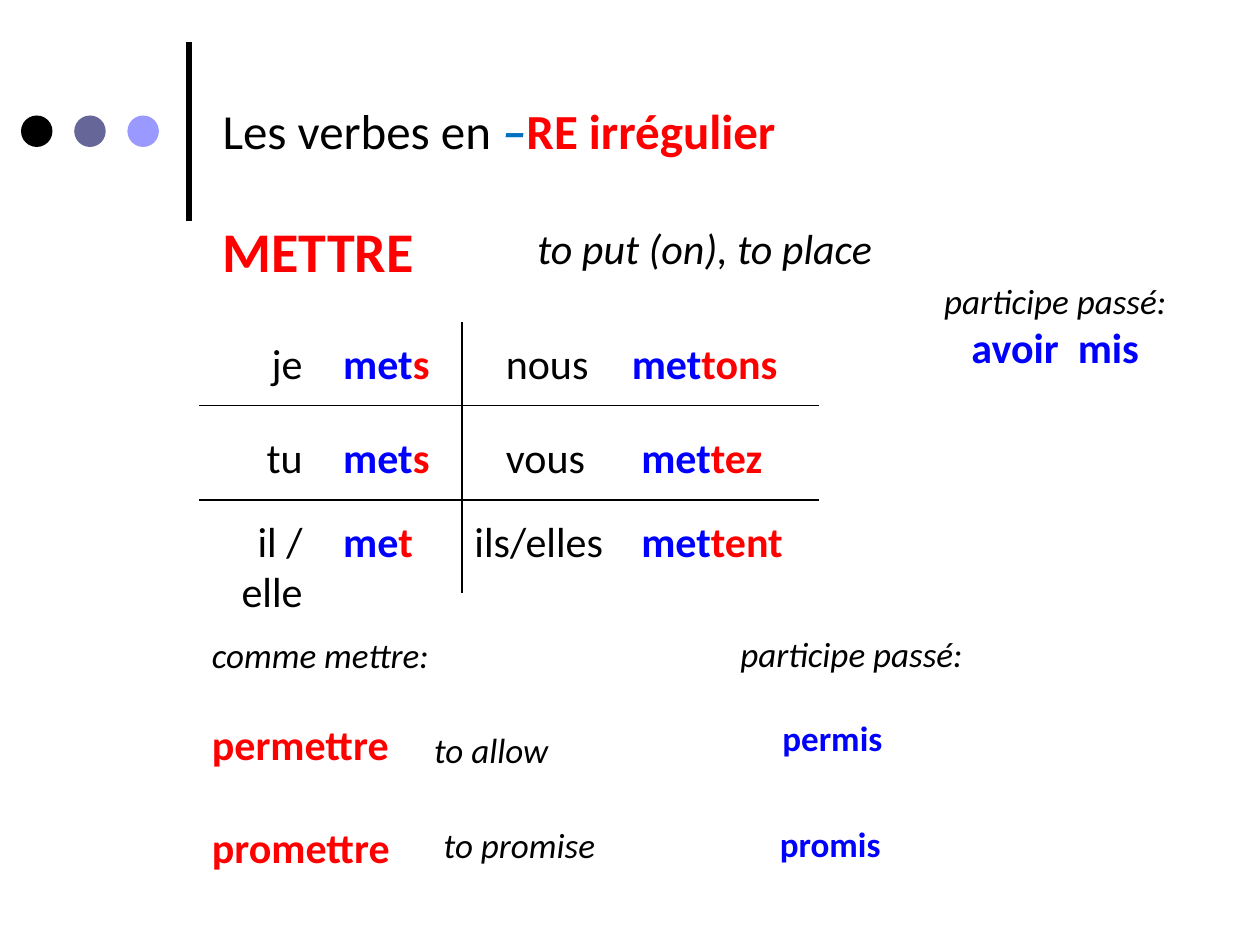
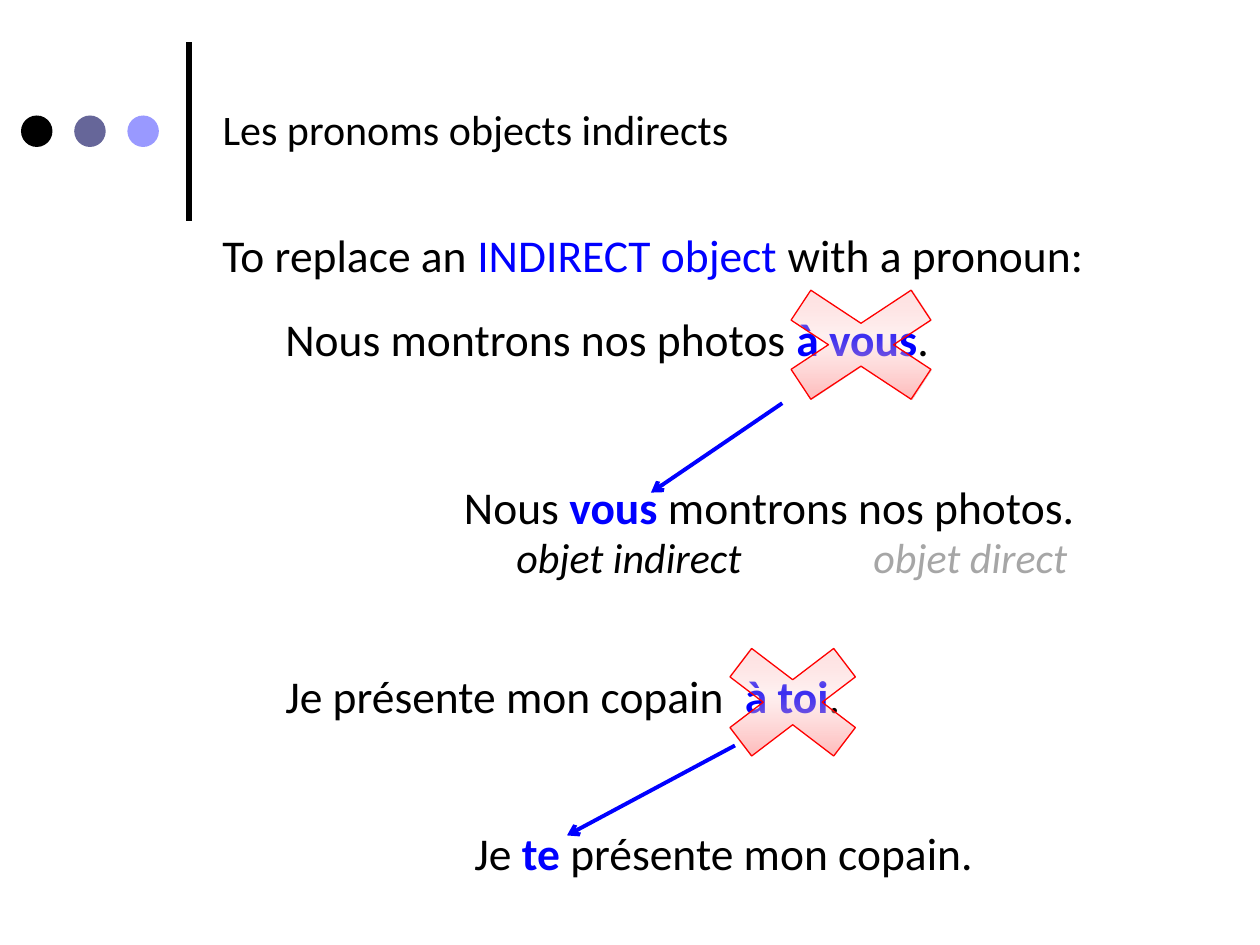
import dataclasses

import lxml.etree
import pptx
import pptx.dml.color
import pptx.enum.dml
import pptx.enum.shapes
import pptx.enum.text
import pptx.oxml.ns
import pptx.util

Pt = pptx.util.Pt
qn = pptx.oxml.ns.qn
ALIGN = pptx.enum.text.PP_ALIGN
SHAPE = pptx.enum.shapes.MSO_SHAPE


class Theme:
    font = "Calibri"
    black, red, blue, grey = "000000", "FF0000", "0000FF", "A6A6A6"
    dash_blue = "0070C0"
    dots = ("000000", "666699", "9999FF")
    # position %, colour, opacity %
    cross_stops = ((0, "FFA0A0", 100), (56, "FFC5C5", 23), (100, "FFE3E3", 100))
    verb, title, sentence, body, note = 32, 28, 26, 24, 20
    hairline, arrow, bar = 0.75, 2.25, 3


@dataclasses.dataclass
class Box:
    left: float
    top: float
    width: float
    height: float = 36

    def inside(self, left, top, width, height=36):
        """A box placed relative to this one's top left corner."""
        return Box(self.left + left, self.top + top, width, height)

    def lengths(self):
        return [Pt(value) for value in (self.left, self.top, self.width, self.height)]


def rgb(value):
    return pptx.dml.color.RGBColor.from_string(value)


def apply(target, values):
    for name, value in values.items():
        setattr(target, name, value)


# Text: a run is (text, colour) or (text, colour, traits), traits from "b" and "i"
def write_runs(paragraph, runs, size, align=ALIGN.LEFT):
    paragraph.alignment = align
    for text, colour, *traits in runs:
        run = paragraph.add_run()
        run.text = text
        flags = "".join(traits)
        apply(run.font, {"name": Theme.font, "size": Pt(size),
                         "bold": "b" in flags, "italic": "i" in flags})
        run.font.color.rgb = rgb(colour)


def format_frame(frame, wrap=True):
    apply(frame, {
        "word_wrap": wrap,
        "auto_size": pptx.enum.text.MSO_AUTO_SIZE.SHAPE_TO_FIT_TEXT,
        "vertical_anchor": pptx.enum.text.MSO_ANCHOR.TOP,
        "margin_left": Pt(7.2), "margin_right": Pt(7.2),
        "margin_top": Pt(3.6), "margin_bottom": Pt(3.6),
    })


def add_text(slide, box, runs, size=Theme.body, align=ALIGN.LEFT):
    frame = slide.shapes.add_textbox(*box.lengths()).text_frame
    format_frame(frame)
    write_runs(frame.paragraphs[0], runs, size, align)
    return frame


def add_line(slide, start, end, colour, width, arrow=False):
    line = slide.shapes.add_connector(
        pptx.enum.shapes.MSO_CONNECTOR.STRAIGHT, *[Pt(value) for value in (*start, *end)])
    line.line.color.rgb = rgb(colour)
    line.line.width = Pt(width)
    properties = line._element.spPr
    if arrow:
        lxml.etree.SubElement(properties.find(qn("a:ln")), qn("a:tailEnd"), type="arrow")
    lxml.etree.SubElement(properties, qn("a:effectLst"))


# Shared slide frame: dots, bar and title
def add_slide(presentation, title_box, title_runs, title_size, wrap=True):
    slide = presentation.slides.add_slide(presentation.slide_layouts[5])
    add_line(slide, (108, 126), (108, 24), Theme.black, Theme.bar)
    for index, colour in enumerate(Theme.dots):
        dot = slide.shapes.add_shape(
            SHAPE.OVAL, *Box(12 + 30.4 * index, 66, 18, 18).lengths())
        dot.shadow.inherit = False
        dot.fill.solid()
        dot.fill.fore_color.rgb = rgb(colour)
        dot.line.fill.background()
    title = slide.shapes.title
    apply(title, dict(zip(("left", "top", "width", "height"), title_box.lengths())))
    format_frame(title.text_frame, wrap)
    write_runs(title.text_frame.paragraphs[0], title_runs, title_size)
    return slide


# Slide 1 regions
def add_verb_heading(slide, box):
    add_text(slide, box.inside(0, 0, 186, 46), [("METTRE", Theme.red, "b")], Theme.verb)
    add_text(slide, box.inside(180, 3.6, 228), [("to put (on), to place", Theme.black, "i")])


def add_conjugation(slide, box):
    """Six forms in two columns, divided by a cross of hairlines."""
    middle = box.left + 150
    for top in (47.5, 101.5):
        add_line(slide, (box.left, box.top + top), (box.left + box.width, box.top + top),
                 Theme.black, Theme.hairline)
    add_line(slide, (middle, box.top), (middle, box.top + box.height),
             Theme.black, Theme.hairline)

    # row top; pronoun, its width, stem, ending; pronoun, its left, stem, ending
    rows = (
        (5, ("je", 42, "met", "s"), ("nous", 168, "met", "tons")),
        (58.5, ("tu", 54, "met", "s"), ("vous", 168, " met", "tez")),
        (106.5, ("il / elle", 78, "me", "t"), ("ils/elles", 150, " met", "tent")),
    )
    for top, singular, plural in rows:
        pronoun, width, stem, ending = singular
        add_text(slide, box.inside(66 - width, top, width), [(pronoun, Theme.black)],
                 align=ALIGN.RIGHT)
        add_text(slide, box.inside(75, top, 99),
                 [(stem, Theme.blue, "b"), (ending, Theme.red, "b")])
        pronoun, left, stem, ending = plural
        add_text(slide, box.inside(left, top, 246 - left), [(pronoun, Theme.black)])
        add_text(slide, box.inside(240, top, 147),
                 [(stem, Theme.blue, "b"), (ending, Theme.red, "b")])


def add_participle(slide, box):
    add_text(slide, box.inside(0, 0, box.width, 32),
             [("participe passé:", Theme.black, "i")], Theme.note, ALIGN.CENTER)
    add_text(slide, box.inside(0, 24, box.width),
             [("avoir  mis", Theme.blue, "b")], align=ALIGN.CENTER)


def add_similar_verbs(slide, box):
    frame = add_text(slide, box.inside(0, 0, 178, 144),
                     [("comme mettre:", Theme.black, "i")], Theme.note)
    for verb, gap in (("permettre", 24.4), ("promettre", 30.4)):
        paragraph = frame.add_paragraph()
        paragraph.space_before = Pt(gap)
        write_runs(paragraph, [(verb, Theme.red, "b")], Theme.body)

    notes = (
        (127, 54, 150, "to allow", Theme.black, "i"),
        (132.5, 108.8, 150, "to promise", Theme.black, "i"),
        (302, -0.7, 150, "participe passé:", Theme.black, "i"),
        (326, 47.5, 79, "permis", Theme.blue, "b"),
        (324.5, 108, 79, "promis", Theme.blue, "b"),
    )
    for left, top, width, *run in notes:
        add_text(slide, box.inside(left, top, width, 32), [run], Theme.note)


def build_verb_slide(presentation):
    slide = add_slide(presentation, Box(120, 54, 342, 41), [
        ("Les verbes en ", Theme.black), ("–", Theme.dash_blue, "bi"),
        ("RE irrégulier", Theme.red, "b")], Theme.title, wrap=False)
    add_verb_heading(slide, Box(120, 120, 408))
    add_conjugation(slide, Box(114, 184.3, 354, 154.8))
    add_participle(slide, Box(522, 156, 162))
    add_similar_verbs(slide, Box(114, 358.5, 460))


# Slide 2 regions
def add_cross(slide, box):
    cross = slide.shapes.add_shape(SHAPE.MATH_MULTIPLY, *box.lengths())
    cross.shadow.inherit = False
    cross.fill.gradient()
    cross.fill.gradient_angle = 90
    stops = cross._element.spPr.find(".//" + qn("a:gsLst"))
    for stop in list(stops):
        stops.remove(stop)
    for position, colour, opacity in Theme.cross_stops:
        stop = lxml.etree.SubElement(stops, qn("a:gs"), pos=str(position * 1000))
        value = lxml.etree.SubElement(stop, qn("a:srgbClr"), val=colour)
        if opacity < 100:
            lxml.etree.SubElement(value, qn("a:alpha"), val=str(opacity * 1000))
    cross.line.color.rgb = rgb(Theme.red)
    cross.line.width = Pt(Theme.hairline)


def add_replacement(slide, box, before, after, after_box, cross_box, arrow):
    """A sentence, its crossed-out object, and an arrow to the new sentence.

    The last three arguments are relative to the region's box."""
    for place, (opening, pronoun, closing) in (
            (box.inside(0, 0, 468, 39), before), (box.inside(*after_box), after)):
        add_text(slide, place, [(opening, Theme.black), (pronoun, Theme.blue, "b"),
                                (closing, Theme.black)], Theme.sentence)
    add_cross(slide, box.inside(*cross_box))
    start, end = [(box.left + x, box.top + y) for x, y in arrow]
    add_line(slide, start, end, Theme.blue, Theme.arrow, arrow=True)


def add_object_labels(slide, box):
    add_text(slide, box.inside(0, 0, 156), [("objet indirect", Theme.black, "i")])
    add_text(slide, box.inside(204, 0, 156), [("objet direct", Theme.grey, "i")])


def build_pronoun_slide(presentation):
    slide = add_slide(presentation, Box(120, 55.5, 540, 36),
                      [("Les pronoms objects indirects", Theme.black)], Theme.body)
    add_text(slide, Box(120, 126, 576, 39), [
        ("To replace an ", Theme.black), ("INDIRECT object ", Theme.blue),
        ("with a pronoun:", Theme.black)], Theme.sentence)
    add_replacement(
        slide, Box(156, 174, 480),
        ("Nous montrons nos photos ", "à vous", "."),
        ("Nous ", "vous ", "montrons nos photos."),
        (102, 96, 378, 39), (270, -20.5, 132, 87), ((291, 56.4), (216, 107.5)))
    add_object_labels(slide, Box(288, 300, 360))
    add_replacement(
        slide, Box(156, 378, 480),
        ("Je présente mon copain  ", "à toi", "."),
        ("Je ", "te ", "présente mon copain."),
        (108, 90, 324, 39), (240, -20.2, 114, 87), ((264, 48), (168, 99.4)))


def main():
    presentation = pptx.Presentation()
    apply(presentation, {"slide_width": Pt(720), "slide_height": Pt(540)})
    build_verb_slide(presentation)
    build_pronoun_slide(presentation)
    presentation.save("out.pptx")


if __name__ == "__main__":
    main()
